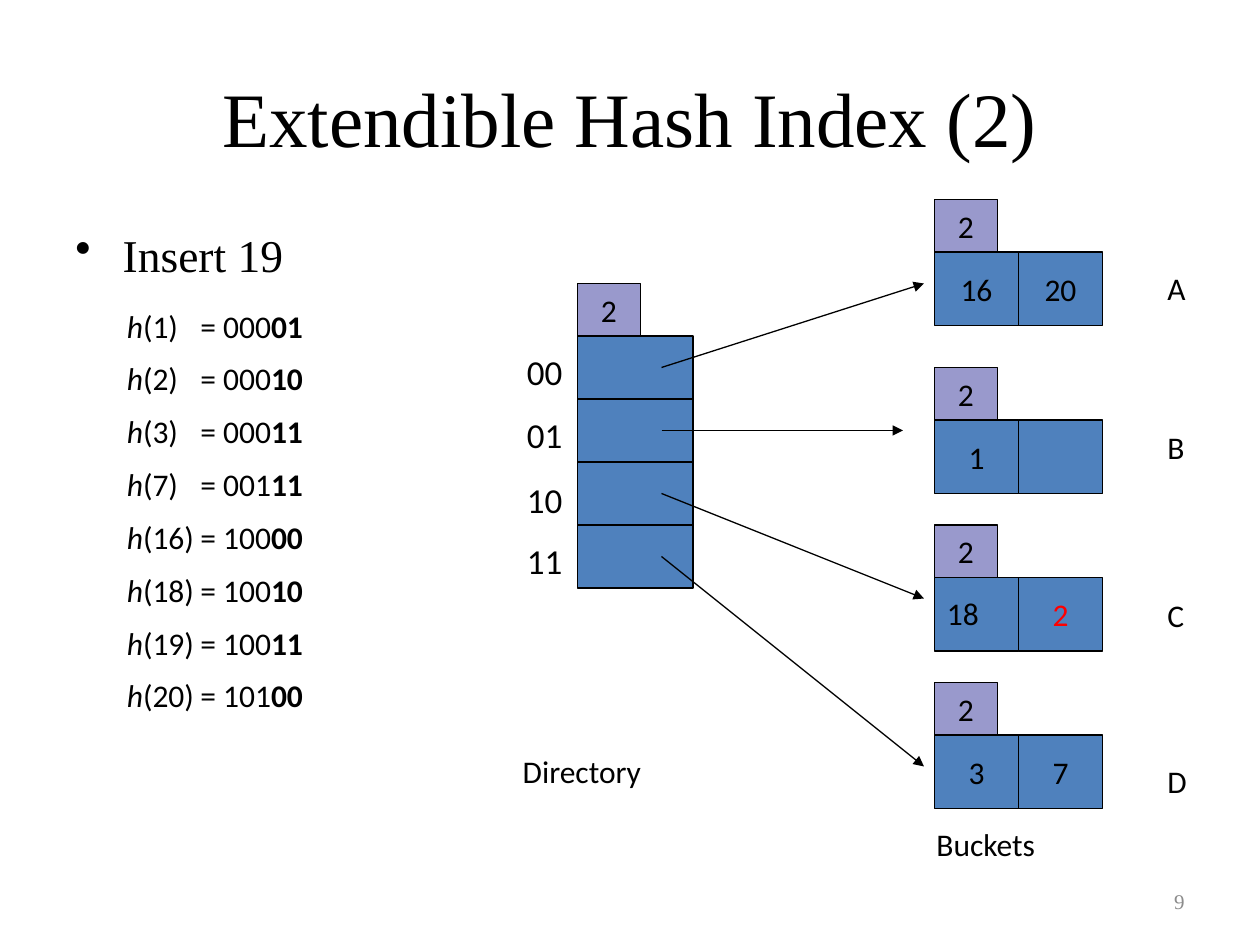
from lxml import etree
from pptx import Presentation
from pptx.dml.color import RGBColor
from pptx.enum.shapes import MSO_CONNECTOR, MSO_SHAPE
from pptx.enum.text import MSO_ANCHOR, PP_ALIGN
from pptx.oxml.ns import qn
from pptx.util import Pt

EMU_PER_PX = 7620  # 120 px to the inch
LEFT, CENTER, RIGHT = PP_ALIGN.LEFT, PP_ALIGN.CENTER, PP_ALIGN.RIGHT
JUSTIFY = PP_ALIGN.JUSTIFY
TOP, MIDDLE = MSO_ANCHOR.TOP, MSO_ANCHOR.MIDDLE
RECTANGLE, STRAIGHT = MSO_SHAPE.RECTANGLE, MSO_CONNECTOR.STRAIGHT

HASHES = [
    (1, "000", "01"), (2, "000", "10"), (3, "000", "11"), (7, "001", "11"),
    (16, "100", "00"), (18, "100", "10"), (19, "100", "11"), (20, "101", "00"),
]
DIRECTORY_LEFT, DIRECTORY_TOP, ENTRY_WIDTH, ENTRY_HEIGHT = 550, 320, 110, 60
BUCKET_LEFT, CELL_WIDTH, CELL_HEIGHT = 890, 80, 70
DEPTH_WIDTH, DEPTH_HEIGHT = 60, 50
# directory key, key top, arrow end
ENTRIES = [
    ("00", 328, (880, 270)), ("01", 388, (860, 410)),
    ("10", 450, (880, 570)), ("11", 508, (880, 730)),
]
# name, name top, bucket top, cell values
BUCKETS = [
    ("A", 250, 240, ("16", "20")), ("B", 402, 400, ("1", "")),
    ("C", 562, 550, ("", "2")), ("D", 720, 700, ("3", "7")),
]
NEW_VALUE = ("C", "2")


def px(length):
    return int(length * EMU_PER_PX)


def color(value):
    return RGBColor.from_string(value)


class Diagram:
    """Style and current slide."""

    BODY_FONT, HEADING_FONT = "Calibri", "Times New Roman"
    INK, GREY, RED = "000000", "8C8C8C", "FF0000"
    CELL_FILL, DEPTH_FILL = "4F81BD", "9999CC"
    TEXT_SIZE, LINE_WIDTH = 18, 0.75

    def __init__(self, slide):
        self.slide = slide

    def style(self, paragraph, size=TEXT_SIZE, font=BODY_FONT, ink=INK, align=LEFT):
        paragraph.alignment = align
        paragraph.font.size = Pt(size)
        paragraph.font.name = font
        paragraph.font.color.rgb = color(ink)

    def frame(self, left, top, width, height, anchor=TOP):
        box = self.slide.shapes.add_textbox(px(left), px(top), px(width), px(height))
        box.text_frame.word_wrap = True
        box.text_frame.vertical_anchor = anchor
        return box.text_frame

    def text(self, words, left, top, width, height, anchor=TOP, **style):
        paragraph = self.frame(left, top, width, height, anchor).paragraphs[0]
        paragraph.text = words
        self.style(paragraph, **style)
        return paragraph

    def bullet(self, words, left, top, width, height, indent, **style):
        paragraph = self.text(words, left, top, width, height, **style)
        paragraph.space_before = Pt(5)
        properties = paragraph._p.get_or_add_pPr()
        properties.set("marL", str(px(indent)))
        properties.set("indent", str(-px(indent)))
        properties.insert_element_before(
            properties.makeelement(qn("a:buChar"), {"char": "•"}),
            "a:tabLst", "a:defRPr")

    def hash_list(self, rows, left, top, width, height, equals_at):
        frame = self.frame(left, top, width, height)
        for index, (key, prefix, suffix) in enumerate(rows):
            paragraph = frame.paragraphs[0] if index == 0 else frame.add_paragraph()
            self.style(paragraph)
            paragraph.space_before = Pt(8.6)
            properties = paragraph._p.get_or_add_pPr()
            tabs = properties.makeelement(qn("a:tabLst"), {})
            etree.SubElement(tabs, qn("a:tab"), pos=str(px(equals_at)), algn="l")
            properties.insert_element_before(tabs, "a:defRPr")
            for words, italic, bold in (
                ("h", True, False),
                (f"({key})\t= {prefix}", False, False),
                (suffix, False, True),
            ):
                run = paragraph.add_run()
                run.text = words
                run.font.italic, run.font.bold = italic, bold

    def box(self, left, top, width, height, fill=CELL_FILL, words="", ink=INK):
        shape = self.slide.shapes.add_shape(
            RECTANGLE, px(left), px(top), px(width), px(height))
        shape.shadow.inherit = False
        shape.fill.solid()
        shape.fill.fore_color.rgb = color(fill)
        shape.line.color.rgb = color(self.INK)
        shape.line.width = Pt(self.LINE_WIDTH)
        if words:
            frame = shape.text_frame
            frame.word_wrap = False
            frame.vertical_anchor = MIDDLE
            frame.paragraphs[0].text = words
            self.style(frame.paragraphs[0], ink=ink, align=CENTER)

    def depth(self, left, bottom, words):
        """Depth counter standing on a directory or bucket."""
        self.box(left, bottom - DEPTH_HEIGHT, DEPTH_WIDTH, DEPTH_HEIGHT,
                 self.DEPTH_FILL, words)

    def arrow(self, start, end):
        connector = self.slide.shapes.add_connector(
            STRAIGHT, *(px(value) for value in (*start, *end)))
        connector.line.color.rgb = color(self.INK)
        connector.line.width = Pt(self.LINE_WIDTH)
        properties = connector._element.spPr
        etree.SubElement(properties.find(qn("a:ln")), qn("a:tailEnd"), type="triangle")
        etree.SubElement(properties, qn("a:effectLst"))


def main():
    presentation = Presentation()
    presentation.slide_width, presentation.slide_height = px(1200), px(900)
    diagram = Diagram(presentation.slides.add_slide(presentation.slide_layouts[6]))
    heading = diagram.HEADING_FONT

    diagram.text("Extendible Hash Index (2)", 60, 36, 1080, 150, MIDDLE,
                 size=44, font=heading, align=CENTER)
    diagram.bullet("Insert 19", 60, 210, 1080, 594, indent=45,
                   size=26, font=heading, align=JUSTIFY)
    diagram.text("9", 860, 834, 280, 48, MIDDLE,
                 size=12, font=heading, ink=diagram.GREY, align=RIGHT)
    diagram.hash_list(HASHES, 109, 286, 287, 539, equals_at=70)

    diagram.depth(DIRECTORY_LEFT, DIRECTORY_TOP, "2")
    for index, (key, key_top, _) in enumerate(ENTRIES):
        diagram.box(DIRECTORY_LEFT, DIRECTORY_TOP + index * ENTRY_HEIGHT,
                    ENTRY_WIDTH, ENTRY_HEIGHT)
        diagram.text(key, 490, key_top, 61, 52, size=20)
    diagram.text("Directory", 486, 710, 184, 60)

    for name, name_top, top, values in BUCKETS:
        for column, value in enumerate(values):
            ink = diagram.RED if (name, value) == NEW_VALUE else diagram.INK
            diagram.box(BUCKET_LEFT + column * CELL_WIDTH, top,
                        CELL_WIDTH, CELL_HEIGHT, words=value, ink=ink)
        diagram.depth(BUCKET_LEFT, top, "2")
        diagram.text(name, 1100, name_top, 46, 48)
    diagram.text("18", BUCKET_LEFT, 560, 68, 60)
    diagram.text("Buckets", 880, 780, 167, 60)

    for index, (_, _, end) in enumerate(ENTRIES):
        middle = DIRECTORY_TOP + index * ENTRY_HEIGHT + ENTRY_HEIGHT // 2
        diagram.arrow((630, middle), end)

    presentation.save("out.pptx")


if __name__ == "__main__":
    main()
